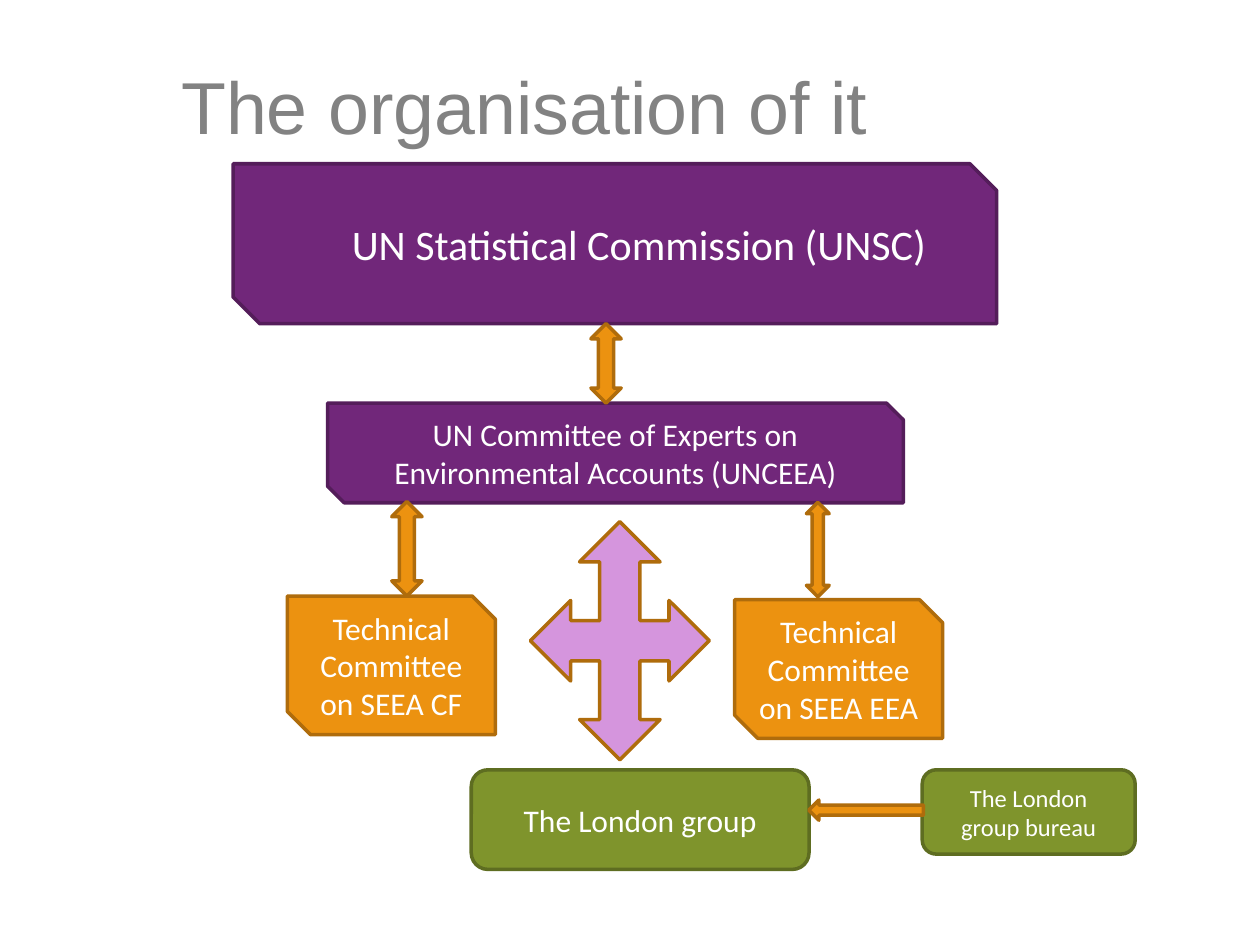
import pptx
import pptx.dml.color
import pptx.enum.shapes
import pptx.enum.text
import pptx.util

Pt = pptx.util.Pt
SHAPES = pptx.enum.shapes.MSO_SHAPE
ALIGN = pptx.enum.text.PP_ALIGN
ANCHOR = pptx.enum.text.MSO_ANCHOR

COLORS = {
    "title": "828282", "white": "FFFFFF",
    "purple": "71277A", "purple_line": "541D5A",
    "orange": "EC9210", "orange_line": "AF6C0C",
    "green": "7F942C", "green_line": "5E6D21",
    "lilac": "D595DD",
}


def rgb(name):
    return pptx.dml.color.RGBColor.from_string(COLORS[name])


def write_text(shape, text, size, font, color, align):
    text_frame = shape.text_frame
    text_frame.word_wrap = True
    text_frame.vertical_anchor = ANCHOR.MIDDLE
    text_frame.text = text
    paragraph = text_frame.paragraphs[0]
    paragraph.alignment = align
    run_font = paragraph.runs[0].font
    run_font.size = Pt(size)
    run_font.name = font
    run_font.color.rgb = rgb(color)


def add_block(slide, kind, box, fill, line):
    shape = slide.shapes.add_shape(kind, *(Pt(value) for value in box))
    shape.shadow.inherit = False
    shape.fill.solid()
    shape.fill.fore_color.rgb = rgb(fill)
    shape.line.color.rgb = rgb(line)
    shape.line.width = Pt(2)
    return shape


def add_title(slide, box):
    title = slide.shapes.add_textbox(*(Pt(value) for value in box))
    write_text(title, "The organisation of it", 42, "Arial", "title", ALIGN.LEFT)


def add_organisation(slide, box):
    """Draw the bodies, then the block arrows between them."""
    left, top, _, _ = box

    def place(x, y, width, height):
        return left + x, top + y, width, height

    snipped, rounded = SHAPES.SNIP_2_DIAG_RECTANGLE, SHAPES.ROUNDED_RECTANGLE
    commission = "UN Statistical Commission (UNSC)"
    bodies = [
        ("UN Committee of Experts on Environmental Accounts (UNCEEA)",
         snipped, (54, 136.8, 329, 56.9), "purple", 18),
        (commission, snipped, (0, 0, 436.3, 91.4), "purple", 24),
        ("Technical Committee on SEEA CF",
         snipped, (31, 247, 118.8, 79.2), "orange", 18),
        ("Technical Committee on SEEA EEA",
         snipped, (286.6, 249.1, 118.8, 79.2), "orange", 18),
        ("The London group", rounded, (136.1, 346.3, 193, 56.9), "green", 18),
        ("The London group bureau",
         rounded, (393.8, 346.3, 121.7, 48.2), "green", 14),
    ]
    for text, kind, area, color, size in bodies:
        shape = add_block(slide, kind, place(*area), color, color + "_line")
        write_text(shape, text, size, "Calibri", "white", ALIGN.CENTER)
        if text == commission:
            shape.text_frame.margin_left = Pt(34.6)

    arrows = [
        (SHAPES.UP_DOWN_ARROW, (90.7, 193, 17.3, 54), "orange"),
        (SHAPES.UP_DOWN_ARROW, (327.6, 193.4, 13, 54), "orange"),
        (SHAPES.UP_DOWN_ARROW, (204.5, 91.4, 17.3, 45.4), "orange"),
        (SHAPES.QUAD_ARROW, (169.9, 204.5, 102.2, 136.1), "lilac"),
        (SHAPES.LEFT_ARROW, (329, 363.6, 65.5, 11.5), "orange"),
    ]
    for kind, area, color in arrows:
        add_block(slide, kind, place(*area), color, "orange_line")


def main():
    presentation = pptx.Presentation()
    presentation.slide_width = Pt(720)
    presentation.slide_height = Pt(540)
    slide = presentation.slides.add_slide(presentation.slide_layouts[6])
    add_title(slide, (96.5, 15.1, 585.4, 90))
    add_organisation(slide, (133.2, 93.6, 515.5, 403.2))
    presentation.save("out.pptx")


if __name__ == "__main__":
    main()
